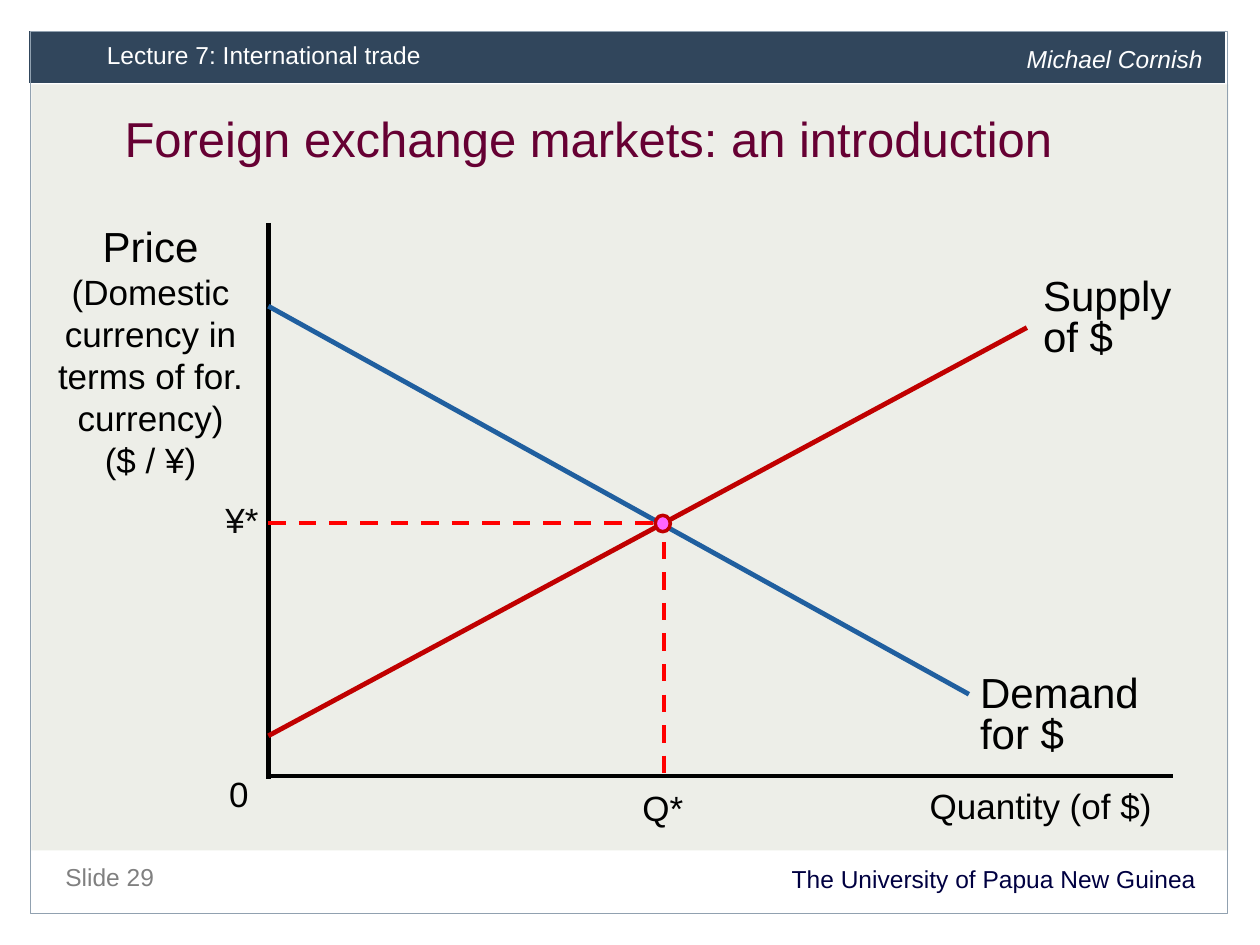
from typing import NamedTuple, Optional

from lxml.etree import SubElement
from pptx import Presentation
from pptx.dml.color import RGBColor
from pptx.enum.dml import MSO_LINE_DASH_STYLE as Dash
from pptx.enum.shapes import MSO_CONNECTOR as Connector, MSO_SHAPE as Preset
from pptx.enum.text import MSO_ANCHOR as Anchor, PP_ALIGN as Align
from pptx.oxml.ns import qn
from pptx.util import Inches, Pt

FONT = "Arial"
BLACK, WHITE = "000000", "FFFFFF"
SUPPLY_RED, DEMAND_BLUE, GUIDE_RED = "C00000", "205F9F", "FF0000"
AXIS_X, AXIS_Y = 2.13, 6.16
EQUILIBRIUM_X, EQUILIBRIUM_Y = 5.27, 4.15


class Box(NamedTuple):
    left: float
    top: float
    width: float
    height: float


class Panel(NamedTuple):
    box: Box
    preset: Preset = Preset.RECTANGLE
    fill: Optional[str] = None
    line: Optional[str] = None
    weight: float = 0.5


class Label(NamedTuple):
    box: Box
    lines: tuple[tuple[str, float], ...]
    color: str = BLACK
    paragraph_format: dict = {}
    italic: bool = False


class Segment(NamedTuple):
    start: tuple[float, float]
    end: tuple[float, float]
    color: str = BLACK
    weight: float = 2.5
    dash: Optional[Dash] = None


def rgb(value: str) -> RGBColor:
    return RGBColor.from_string(value)


def apply_format(target, values: dict) -> None:
    for name, value in values.items():
        setattr(target, name, value)


def draw_panel(slide, panel: Panel) -> None:
    shape = slide.shapes.add_shape(panel.preset, *map(Inches, panel.box))
    shape.shadow.inherit = False
    if panel.fill:
        shape.fill.solid()
        shape.fill.fore_color.rgb = rgb(panel.fill)
    else:
        shape.fill.background()
    if panel.line:
        shape.line.color.rgb = rgb(panel.line)
        shape.line.width = Pt(panel.weight)
    else:
        shape.line.fill.background()


def draw_label(slide, label: Label) -> None:
    frame = slide.shapes.add_textbox(*map(Inches, label.box)).text_frame
    apply_format(frame, {"word_wrap": True, "vertical_anchor": Anchor.TOP})
    for index, (text, size) in enumerate(label.lines):
        paragraph = frame.add_paragraph() if index else frame.paragraphs[0]
        apply_format(paragraph, label.paragraph_format)
        run = paragraph.add_run()
        run.text = text
        apply_format(run.font, {"name": FONT, "size": Pt(size), "italic": label.italic})
        run.font.color.rgb = rgb(label.color)


def draw_segment(slide, segment: Segment) -> None:
    ends = map(Inches, segment.start + segment.end)
    connector = slide.shapes.add_connector(Connector.STRAIGHT, *ends)
    connector.line.color.rgb = rgb(segment.color)
    apply_format(connector.line, {"width": Pt(segment.weight), "dash_style": segment.dash})
    SubElement(connector._element.spPr, qn("a:effectLst"))


HEADER = {"line_spacing": Pt(18)}
TIGHT = {"line_spacing": 0.8}

FRAME_PANELS = [
    Panel(Box(0.25, 0.67, 9.5, 6.08), fill="EDEEE8"),
    Panel(Box(0.23, 0.24, 9.5, 0.42), fill="31465C", line=WHITE),
    Panel(Box(0.24, 0.25, 9.5, 7), line="91A1B0", weight=0.75),
]
FRAME_LABELS = [
    Label(Box(0.42, 6.83, 9.17, 0.32), (("The University of Papua New Guinea", 14),),
          "000041", {"alignment": Align.RIGHT, "line_spacing": Pt(15)}),
    Label(Box(0.42, 6.75, 4.33, 0.34), (("Slide 29", 14),), "808080", {"line_spacing": Pt(20)}),
    Label(Box(0.75, 0.25, 6.13, 0.37), (("Lecture 7: International trade", 14),), WHITE, HEADER),
    Label(Box(8.05, 0.28, 1.64, 0.37), (("Michael Cornish", 14),), WHITE, HEADER, italic=True),
    Label(Box(0.89, 0.92, 8.13, 0.75), (("Foreign exchange markets: an introduction", 28),),
          "660033", {"line_spacing": Pt(26)}),
]
SEGMENTS = [
    Segment((AXIS_X, 1.77), (AXIS_X, 6.18)),
    Segment((AXIS_X, AXIS_Y), (9.31, AXIS_Y)),
    Segment((AXIS_X, 2.43), (7.69, 5.51), DEMAND_BLUE, 2.75),
    Segment((AXIS_X, EQUILIBRIUM_Y), (EQUILIBRIUM_X, EQUILIBRIUM_Y), GUIDE_RED, dash=Dash.DASH),
    Segment((EQUILIBRIUM_X, 4.3), (EQUILIBRIUM_X, AXIS_Y), GUIDE_RED, dash=Dash.DASH),
    Segment((AXIS_X, 5.84), (8.15, 2.6), SUPPLY_RED, 2.75),
]
CHART_LABELS = [
    Label(Box(0.35, 1.7, 1.69, 2.19),
          (("Price", 24), ("(Domestic currency in terms of for. currency)", 20), ("($ / ¥)", 20)),
          paragraph_format={"alignment": Align.CENTER}),
    Label(Box(7.28, 6.24, 1.97, 0.37), (("Quantity (of $)", 20),), paragraph_format=TIGHT),
    Label(Box(1.72, 6.08, 0.4, 0.45), (("0", 20),)),
    Label(Box(7.68, 5.32, 1.87, 0.75), (("Demand for $", 24),), paragraph_format=TIGHT),
    Label(Box(5, 6.19, 0.63, 0.44), (("Q*", 20),)),
    Label(Box(1.69, 3.91, 0.47, 0.44), (("¥*", 20),), "080808"),
    Label(Box(8.18, 2.17, 1.39, 0.75), (("Supply of $", 24),), paragraph_format=TIGHT),
]
EQUILIBRIUM = Panel(Box(5.2, 4.09, 0.12, 0.13), Preset.OVAL, "FF66FF", SUPPLY_RED, 2)


def main() -> None:
    presentation = Presentation()
    apply_format(presentation, {"slide_width": Inches(10), "slide_height": Inches(7.5)})
    slide = presentation.slides.add_slide(presentation.slide_layouts[6])
    for panel in FRAME_PANELS:
        draw_panel(slide, panel)
    for segment in SEGMENTS:
        draw_segment(slide, segment)
    for label in FRAME_LABELS + CHART_LABELS:
        draw_label(slide, label)
    draw_panel(slide, EQUILIBRIUM)
    presentation.save("out.pptx")


if __name__ == "__main__":
    main()
